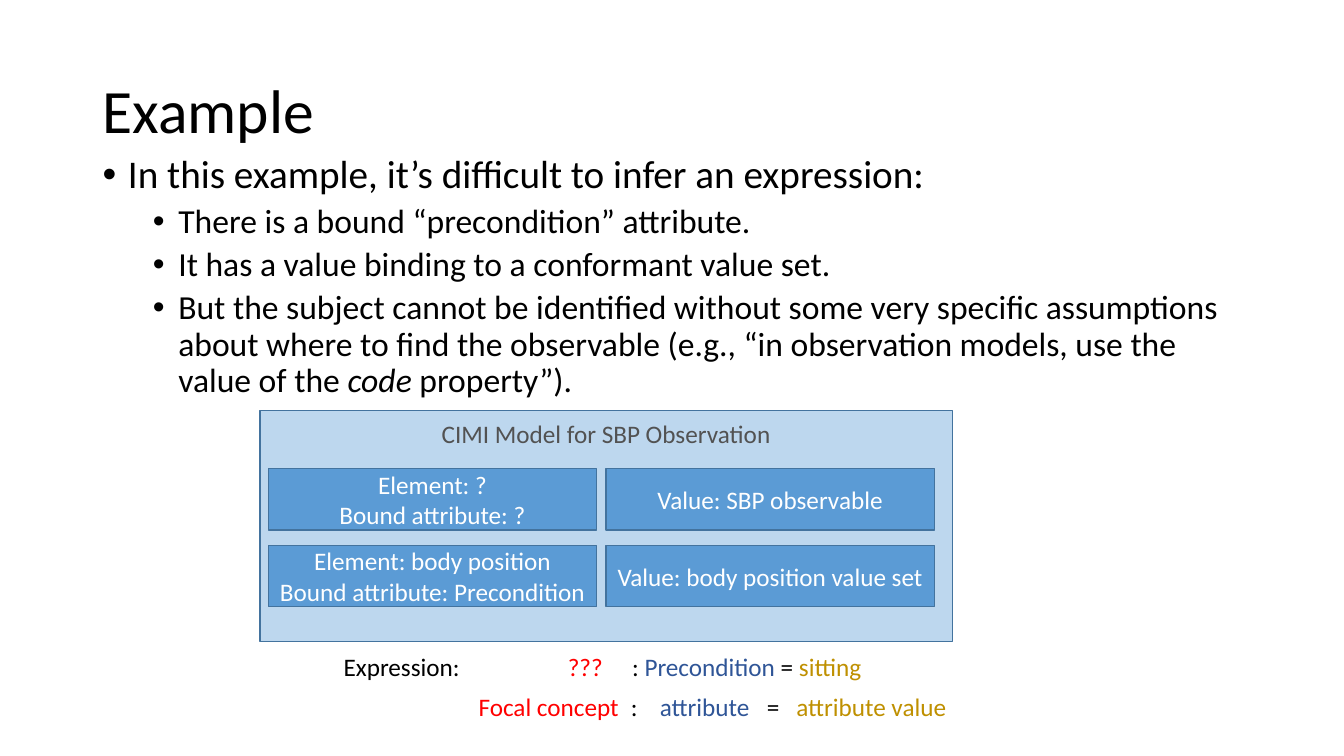
import dataclasses
import typing

import lxml.etree
import pptx
import pptx.dml.color
import pptx.enum.shapes
import pptx.enum.text
import pptx.oxml.ns
import pptx.util

Cm = pptx.util.Cm
ALIGN = pptx.enum.text.PP_ALIGN
ANCHOR = pptx.enum.text.MSO_ANCHOR
FONT = "Calibri"
HUES = {
    "black": "000000", "white": "FFFFFF", "grey": "525252",
    "pale": "BDD7EE", "blue": "5B9BD5", "edge": "43739E",
    "red": "FF0000", "navy": "2F5597", "gold": "BF9000",
}


@dataclasses.dataclass
class Run:
    text: str
    hue: str = "black"
    slant: bool = False


@dataclasses.dataclass
class Box:
    left: float
    top: float
    width: float
    height: float


@dataclasses.dataclass
class Cell:
    col: int
    row: int
    lines: list[str]


@dataclasses.dataclass
class Note:
    box: Box
    tabs: list[float]
    runs: list[Run]


def shade(name: str) -> pptx.dml.color.RGBColor:
    return pptx.dml.color.RGBColor.from_string(HUES[name])


def place(shape: typing.Any, box: Box) -> None:
    shape.left, shape.top = Cm(box.left), Cm(box.top)
    shape.width, shape.height = Cm(box.width), Cm(box.height)


def write(frame: typing.Any, lines: list[list[Run]], size: float = 18,
          align: typing.Any = ALIGN.LEFT, anchor: typing.Any = ANCHOR.TOP) -> None:
    """Fill a text frame, one paragraph for each list of runs."""
    frame.word_wrap = True
    frame.auto_size = pptx.enum.text.MSO_AUTO_SIZE.NONE
    frame.vertical_anchor = anchor
    for spot, runs in enumerate(lines):
        para = frame.add_paragraph() if spot else frame.paragraphs[0]
        para.alignment = align
        for item in runs:
            run = para.add_run()
            run.text = item.text
            run.font.name, run.font.size = FONT, pptx.util.Pt(size)
            run.font.italic = item.slant
            run.font.color.rgb = shade(item.hue)


def add_node(parent: typing.Any, tag: str, **attrs: str) -> typing.Any:
    return lxml.etree.SubElement(parent, pptx.oxml.ns.qn(tag), attrs)


def bullet(para: typing.Any, level: int) -> None:
    para.level, para.line_spacing = level, 0.9
    para.space_before = pptx.util.Pt(5 if level else 10)
    props = para._p.get_or_add_pPr()
    props.set("marL", str(Cm(1.91 if level else 0.64)))
    props.set("indent", str(-Cm(0.64)))
    add_node(props, "a:buFont", typeface="Arial")
    add_node(props, "a:buChar", char="•")


def set_tabs(para: typing.Any, stops: list[float]) -> None:
    tabs = add_node(para._p.get_or_add_pPr(), "a:tabLst")
    for stop in stops:
        add_node(tabs, "a:tab", pos=str(Cm(stop)), algn="l")


def add_rect(slide: typing.Any, box: Box, fill: str) -> typing.Any:
    rect = slide.shapes.add_shape(
        pptx.enum.shapes.MSO_SHAPE.RECTANGLE, 0, 0, 0, 0)
    place(rect, box)
    rect.shadow.inherit = False
    rect.fill.solid()
    rect.fill.fore_color.rgb = shade(fill)
    rect.line.color.rgb = shade("edge")
    rect.line.width = pptx.util.Pt(1)
    return rect


POINTS = [
    [Run("There is a bound “precondition” attribute.")],
    [Run("It has a value binding to a conformant value set.")],
    [Run("But the subject cannot be identified without some very specific "
         "assumptions about where to find the observable (e.g., “in "
         "observation models, use the value of the "),
     Run("code", slant=True), Run(" property”).")],
]
CELLS = [
    Cell(0, 0, ["Element: ?", "Bound attribute: ?"]),
    Cell(1, 0, ["Value: SBP observable"]),
    Cell(0, 1, ["Element: body position", "Bound attribute: Precondition"]),
    Cell(1, 1, ["Value: body position value set"]),
]
NOTES = [
    Note(Box(8.41, 16.28, 13.77, 1.02), [5.65, 7.27],
         [Run("Expression:\t"), Run("???\t", "red"), Run(": "),
          Run("Precondition", "navy"), Run(" = "), Run("sitting", "gold")]),
    Note(Box(11.81, 17.3, 12.47, 1.02), [3.84, 4.57, 7.27, 8.01],
         [Run("Focal concept\t", "red"), Run(":\t"), Run("attribute\t", "navy"),
          Run("=\t"), Run("attribute value", "gold")]),
]


def main() -> None:
    deck = pptx.Presentation()
    deck.slide_width, deck.slide_height = Cm(33.87), Cm(19.05)
    slide = deck.slides.add_slide(deck.slide_layouts[1])

    # Title
    title = slide.shapes.title
    place(title, Box(2.33, 1.02, 29.21, 3.68))
    write(title.text_frame, [[Run("Example")]], size=44, anchor=ANCHOR.MIDDLE)
    title.text_frame.paragraphs[0].line_spacing = 0.9

    # Bulleted list
    body = slide.placeholders[1]
    place(body, Box(2.33, 3.78, 29.21, 12.09))
    lead = [Run("In this example, it’s difficult to infer an expression:")]
    write(body.text_frame, [lead, *POINTS], size=24)
    paras = body.text_frame.paragraphs
    paras[0].runs[0].font.size = pptx.util.Pt(28)
    for spot, para in enumerate(paras):
        bullet(para, min(spot, 1))

    # Model panel
    panel = add_rect(slide, Box(6.55, 10.34, 17.45, 5.82), "pale")
    panel.text_frame.margin_top = Cm(0.2)
    write(panel.text_frame, [[Run("CIMI Model for SBP Observation", "grey")]],
          align=ALIGN.CENTER)

    # Grid of elements and values
    for cell in CELLS:
        box = Box(6.76 + 8.51 * cell.col, 11.81 + 1.93 * cell.row, 8.28, 1.55)
        rect = add_rect(slide, box, "blue")
        write(rect.text_frame, [[Run(line, "white")] for line in cell.lines],
              align=ALIGN.CENTER, anchor=ANCHOR.MIDDLE)

    # Expression and its legend
    for note in NOTES:
        label = slide.shapes.add_textbox(0, 0, 0, 0)
        place(label, note.box)
        write(label.text_frame, [note.runs])
        set_tabs(label.text_frame.paragraphs[0], note.tabs)

    deck.save("out.pptx")


if __name__ == "__main__":
    main()
